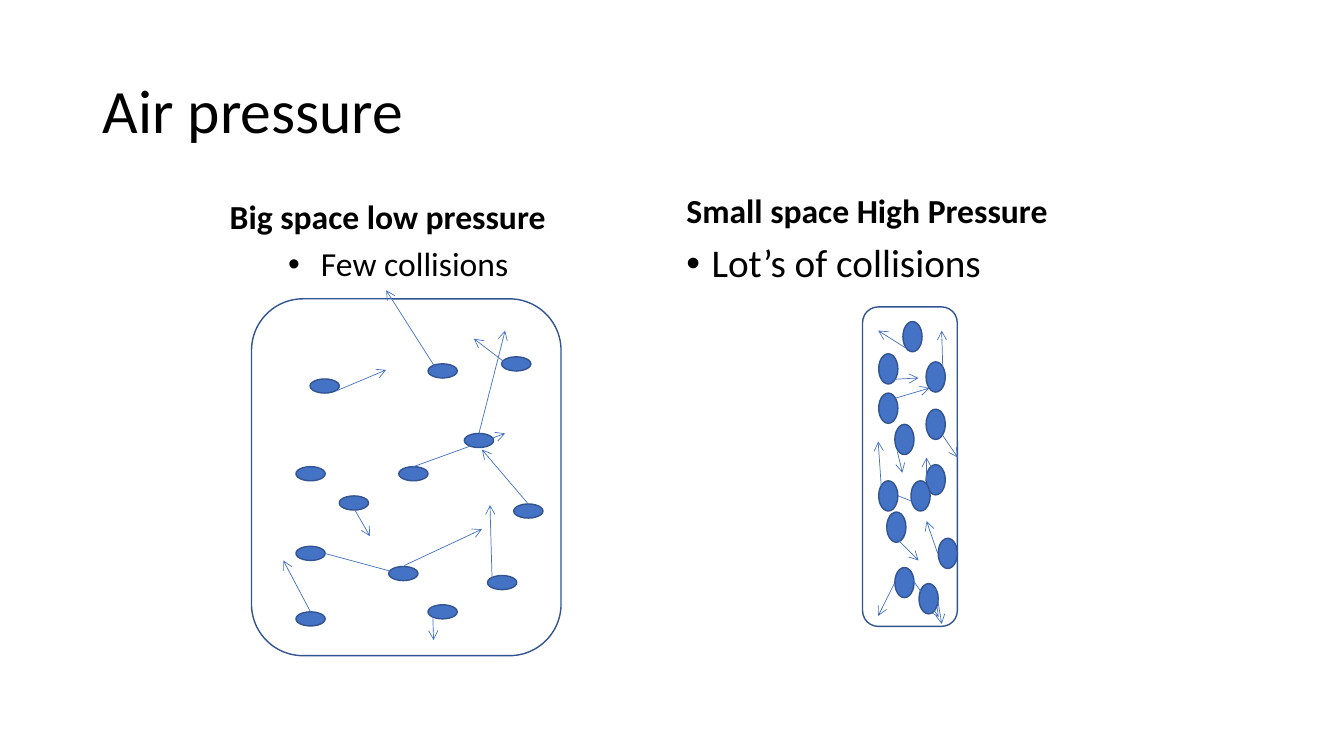
from dataclasses import dataclass

from lxml.etree import SubElement
from pptx import Presentation
from pptx.dml.color import RGBColor
from pptx.enum.shapes import MSO_CONNECTOR, MSO_SHAPE
from pptx.enum.text import MSO_ANCHOR
from pptx.oxml.ns import qn
from pptx.slide import Slide
from pptx.util import Inches, Length, Pt

COLORS = {"text": "000000", "edge": "325491", "fill": "4472C4"}
FONT = "Calibri"
CELL = 0.1  # inches per grid column and row


@dataclass
class Label:
    text: str
    left: float
    top: float
    width: float
    height: float
    size: int
    anchor: MSO_ANCHOR = MSO_ANCHOR.TOP
    bold: bool = False
    indent: float | None = None


@dataclass
class Chamber:
    left: float
    top: float
    width: float
    height: float
    ball: tuple[float, float]
    centers: list[tuple[float, float]]
    moves: list[tuple[float, float, float, float]]


LABELS = [
    Label("Air pressure", 9.2, 4, 115, 14.5, 44, MSO_ANCHOR.MIDDLE),
    Label("Big space low pressure", 21.8, 17, 44.2, 7, 24, MSO_ANCHOR.BOTTOM, True),
    Label(" Few collisions", 22.6, 24.1, 44.2, 43.2, 24, indent=7.5),
    Label("Small space High Pressure", 67.1, 14.4, 56.7, 9, 24, MSO_ANCHOR.BOTTOM, True),
    Label("Lot’s of collisions", 67.1, 23.7, 56.7, 40.3, 28, indent=2.5),
]

SMALL = Chamber(
    85.55, 30.45, 9.4, 31.7, (1.9, 3),
    centers=[
        (88.1, 49.2), (90.5, 33.4), (88.1, 40.5), (92.8, 47.6), (92.1, 59.4),
        (91.3, 49.2), (88.1, 36.6), (92.8, 37.4), (89.7, 57.8), (92.8, 42.1),
        (94, 54.9), (88.9, 52.3), (89.7, 43.6),
    ],
    moves=[
        (89.8, 34.5, 87.1, 32.8), (87.4, 37.7, 91.1, 37.5), (93.5, 36.4, 93.4, 32.8),
        (88.8, 39.5, 92.2, 38.5), (93.5, 43.2, 95, 45.4), (89, 44.8, 89.5, 46.9),
        (89.1, 49.2, 91.9, 50.3), (91.9, 47.7, 91.9, 45.4), (87.9, 52.4, 91.1, 55.6),
        (87.4, 48.2, 87.1, 43.8), (93, 54.9, 91.9, 51.7), (88.7, 57.9, 87.1, 61.1),
        (90.3, 57.2, 93.1, 61.2), (93, 59.5, 92, 58), (93, 59.5, 93.4, 61.9),
    ],
)

BIG = Chamber(
    24.95, 29.65, 30.7, 35.4, (2.9, 1.4),
    centers=[
        (30.8, 61.4), (43.9, 60.7), (35.1, 49.9), (40, 56.9), (30.8, 54.9),
        (32.2, 38.3), (41, 47), (52.4, 50.7), (43.9, 36.8), (49.8, 57.8),
        (51.2, 36.1), (30.8, 47), (47.5, 43.7),
    ],
    moves=[
        (33.3, 38.8, 38.3, 36.7), (43.9, 37.6, 38.3, 28.8), (47.5, 43, 50.1, 32.8),
        (41, 46.3, 50.1, 43), (35.2, 50.6, 36.7, 53.2), (52.4, 50, 47.8, 44.6),
        (30.8, 60.7, 28.1, 55.6), (32.2, 54.9, 40.7, 57.2), (40.1, 56.1, 47.8, 52.5),
        (42.9, 60.2, 43, 63.5), (31.8, 46.5, 29.7, 46.9), (48.8, 57.3, 48.6, 50.1),
        (51.3, 36.9, 47, 33.6),
    ],
)


def grid(*cells: float) -> list[Length]:
    """Turn grid columns or rows into lengths."""
    return [Inches(cell * CELL) for cell in cells]


def color(name: str) -> RGBColor:
    return RGBColor.from_string(COLORS[name])


def add_label(slide: Slide, label: Label) -> None:
    box = slide.shapes.add_textbox(*grid(label.left, label.top, label.width, label.height))
    frame = box.text_frame
    frame.word_wrap = True
    frame.vertical_anchor = label.anchor
    frame.text = label.text
    para = frame.paragraphs[0]
    if label.indent is not None:
        props = para._p.get_or_add_pPr()
        left, hang = grid(label.indent, -2.5)
        props.set("marL", str(left))
        props.set("indent", str(hang))
        SubElement(props, qn("a:buFont"), typeface="Arial")
        SubElement(props, qn("a:buChar"), char="•")
    para.line_spacing = 0.9
    font = para.runs[0].font
    font.name, font.size, font.bold = FONT, Pt(label.size), label.bold
    font.color.rgb = color("text")


def add_outline(slide: Slide, kind: MSO_SHAPE, place: list[Length], filled: bool) -> None:
    shape = slide.shapes.add_shape(kind, *place)
    shape.shadow.inherit = False
    shape.line.color.rgb = color("edge")
    shape.line.width = Pt(1)
    if filled:
        shape.fill.solid()
        shape.fill.fore_color.rgb = color("fill")
    else:
        shape.fill.background()


def add_arrow(slide: Slide, move: tuple[float, float, float, float]) -> None:
    arrow = slide.shapes.add_connector(MSO_CONNECTOR.STRAIGHT, *grid(*move))
    arrow.line.color.rgb = color("fill")
    arrow.line.width = Pt(0.5)
    SubElement(arrow.line._get_or_add_ln(), qn("a:tailEnd"), type="arrow")
    SubElement(arrow._element.spPr, qn("a:effectLst"))


def add_chamber(slide: Slide, room: Chamber) -> None:
    walls = grid(room.left, room.top, room.width, room.height)
    add_outline(slide, MSO_SHAPE.ROUNDED_RECTANGLE, walls, False)
    wide, high = room.ball
    for x, y in room.centers:
        add_outline(slide, MSO_SHAPE.OVAL, grid(x - wide / 2, y - high / 2, wide, high), True)
    for move in room.moves:
        add_arrow(slide, move)


def main() -> None:
    deck = Presentation()
    deck.slide_width, deck.slide_height = Inches(13.33), Inches(7.5)
    slide = deck.slides.add_slide(deck.slide_layouts[6])
    for label in LABELS:
        add_label(slide, label)
    for room in (SMALL, BIG):
        add_chamber(slide, room)
    deck.save("out.pptx")


if __name__ == "__main__":
    main()
